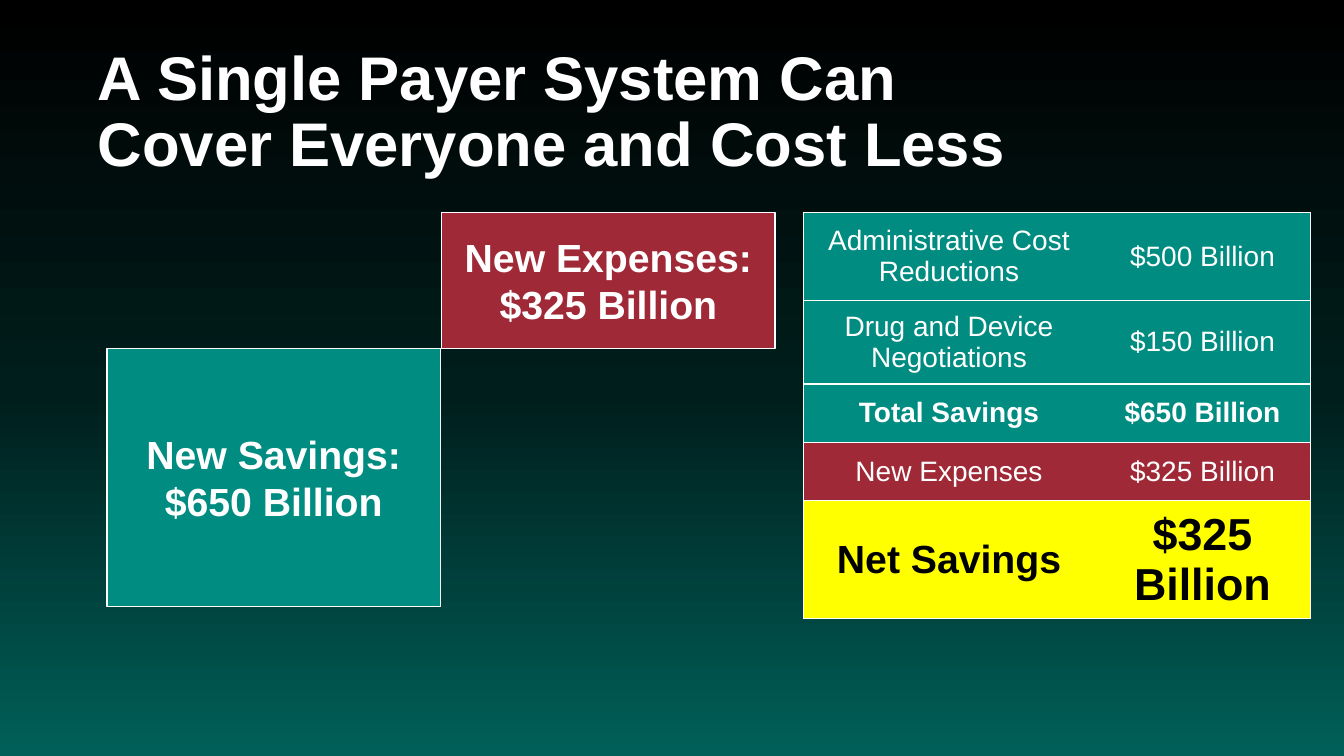
from copy import deepcopy
from dataclasses import dataclass

from lxml import etree
from pptx import Presentation
from pptx.dml.color import RGBColor
from pptx.enum.shapes import MSO_SHAPE
from pptx.enum.text import MSO_ANCHOR, PP_ALIGN
from pptx.oxml.ns import qn
from pptx.util import Emu, Inches, Pt

RECTANGLE = MSO_SHAPE.RECTANGLE
MIDDLE = MSO_ANCHOR.MIDDLE
LEFT, CENTER = PP_ALIGN.LEFT, PP_ALIGN.CENTER

WHITE = RGBColor(0xFF, 0xFF, 0xFF)
BLACK = RGBColor(0x00, 0x00, 0x00)
TEAL = RGBColor(0x00, 0x8C, 0x81)
CRIMSON = RGBColor(0x9F, 0x29, 0x36)
YELLOW = RGBColor(0xFF, 0xFF, 0x00)
DARK_TEAL = RGBColor(0x00, 0x1E, 0x1C)
DEEP_TEAL = RGBColor(0x00, 0x60, 0x59)
BACKDROP = [(0, BLACK), (0.52, DARK_TEAL), (1, DEEP_TEAL)]

FONT = "Arial"
INSET = Inches(0.05)
BORDER = Pt(1)

# The slide is a grid of 40 columns and 30 rows.
WIDTH, HEIGHT = Inches(13.33), Inches(7.5)
COLUMNS, ROWS = 40, 30
CONTENT_TOP = 8.44
EXPENSES_HEIGHT = 5.4


@dataclass(frozen=True)
class Area:
    left: float
    top: float
    width: float
    height: float

    def lengths(self) -> tuple[Emu, Emu, Emu, Emu]:
        return (across(self.left), down(self.top),
                across(self.width), down(self.height))


@dataclass(frozen=True)
class AmountBox:
    area: Area
    fill: RGBColor
    lines: tuple[str, str]


@dataclass(frozen=True)
class BudgetRow:
    label: str
    amount: str
    height: float
    fill: RGBColor
    color: RGBColor = WHITE
    bold: bool = False
    label_size: int = 20
    amount_size: int = 20


TITLE_AREA = Area(2.76, 1.6, 34.5, 5.8)
TITLE_LINES = ("A Single Payer System Can ", "Cover Everyone and Cost Less")

AMOUNT_BOXES = [
    AmountBox(Area(3.18, CONTENT_TOP + EXPENSES_HEIGHT, 9.93, 10.24), TEAL,
              ("New Savings:", "$650 Billion")),
    AmountBox(Area(13.14, CONTENT_TOP, 9.93, EXPENSES_HEIGHT), CRIMSON,
              ("New Expenses:", "$325 Billion")),
]

BUDGET_LEFT = 23.91
BUDGET_COLUMNS = (8.67, 6.42)
BUDGET_ROWS = [
    BudgetRow("Administrative Cost Reductions", "$500 Billion", 3.48, TEAL),
    BudgetRow("Drug and Device Negotiations", "$150 Billion", 3.32, TEAL),
    BudgetRow("Total Savings", "$650 Billion", 2.32, TEAL, bold=True),
    BudgetRow("New Expenses", "$325 Billion", 2.32, CRIMSON),
    BudgetRow("Net Savings", "$325 Billion", 4.44, YELLOW, BLACK, True, 28, 32),
]


def across(columns: float) -> Emu:
    return Emu(round(WIDTH * columns / COLUMNS))


def down(rows: float) -> Emu:
    return Emu(round(HEIGHT * rows / ROWS))


def add_text(paragraph, text: str, size: int, color: RGBColor = WHITE,
             bold: bool = True, align=CENTER) -> None:
    paragraph.alignment = align
    run = paragraph.add_run()
    run.text = text
    run.font.name = FONT
    run.font.size = Pt(size)
    run.font.bold = bold
    run.font.color.rgb = color


def set_up_frame(frame) -> None:
    """Wrap the text, centre it vertically and narrow its margins."""
    frame.word_wrap = True
    frame.vertical_anchor = MIDDLE
    frame.margin_left = frame.margin_right = INSET
    frame.margin_top = frame.margin_bottom = INSET


def paint_backdrop(slide) -> None:
    fill = slide.background.fill
    fill.gradient()
    fill.gradient_angle = 270
    stop_list = next(slide.element.iter(qn("a:gsLst")))
    stop_list.insert(1, deepcopy(stop_list[0]))
    for stop, (position, color) in zip(fill.gradient_stops, BACKDROP):
        stop.position = position
        stop.color.rgb = color


def add_title(slide) -> None:
    frame = slide.shapes.add_textbox(*TITLE_AREA.lengths()).text_frame
    set_up_frame(frame)
    heading = frame.paragraphs[0]
    heading.line_spacing = 0.9
    first, second = TITLE_LINES
    add_text(heading, first, 44, align=LEFT)
    heading.add_line_break()
    add_text(heading, second, 44, align=LEFT)


def add_amount_box(slide, box: AmountBox) -> None:
    panel = slide.shapes.add_shape(RECTANGLE, *box.area.lengths())
    panel.shadow.inherit = False
    panel.fill.solid()
    panel.fill.fore_color.rgb = box.fill
    panel.line.color.rgb = WHITE
    panel.line.width = BORDER
    frame = panel.text_frame
    set_up_frame(frame)
    name, amount = box.lines
    add_text(frame.paragraphs[0], name, 28)
    add_text(frame.add_paragraph(), amount, 28)


def set_borders(cell, open_side: str) -> None:
    """Draw white borders on every side of the cell but the open one."""
    properties = cell._tc.get_or_add_tcPr()
    for side in ("lnL", "lnR", "lnT", "lnB"):
        border = etree.SubElement(properties, qn(f"a:{side}"), w=str(BORDER))
        if side == open_side:
            etree.SubElement(border, qn("a:noFill"))
        else:
            paint = etree.SubElement(border, qn("a:solidFill"))
            etree.SubElement(paint, qn("a:srgbClr"), val=str(WHITE))


def add_budget_table(slide) -> None:
    area = Area(BUDGET_LEFT, CONTENT_TOP, sum(BUDGET_COLUMNS),
                sum(row.height for row in BUDGET_ROWS))
    table = slide.shapes.add_table(
        len(BUDGET_ROWS), len(BUDGET_COLUMNS), *area.lengths()).table
    table.first_row = table.horz_banding = False
    for column, width in zip(table.columns, BUDGET_COLUMNS):
        column.width = across(width)
    for table_row, row in zip(table.rows, BUDGET_ROWS):
        table_row.height = down(row.height)
        entries = ((row.label, row.label_size, "lnR"),
                   (row.amount, row.amount_size, "lnL"))
        for cell, (text, size, open_side) in zip(table_row.cells, entries):
            set_borders(cell, open_side)
            cell.fill.solid()
            cell.fill.fore_color.rgb = row.fill
            cell.vertical_anchor = MIDDLE
            add_text(cell.text_frame.paragraphs[0], text, size,
                     row.color, row.bold)


def main() -> None:
    deck = Presentation()
    deck.slide_width, deck.slide_height = WIDTH, HEIGHT
    slide = deck.slides.add_slide(deck.slide_layouts[6])
    paint_backdrop(slide)
    add_title(slide)
    for box in AMOUNT_BOXES:
        add_amount_box(slide, box)
    add_budget_table(slide)
    deck.save("out.pptx")


if __name__ == "__main__":
    main()
